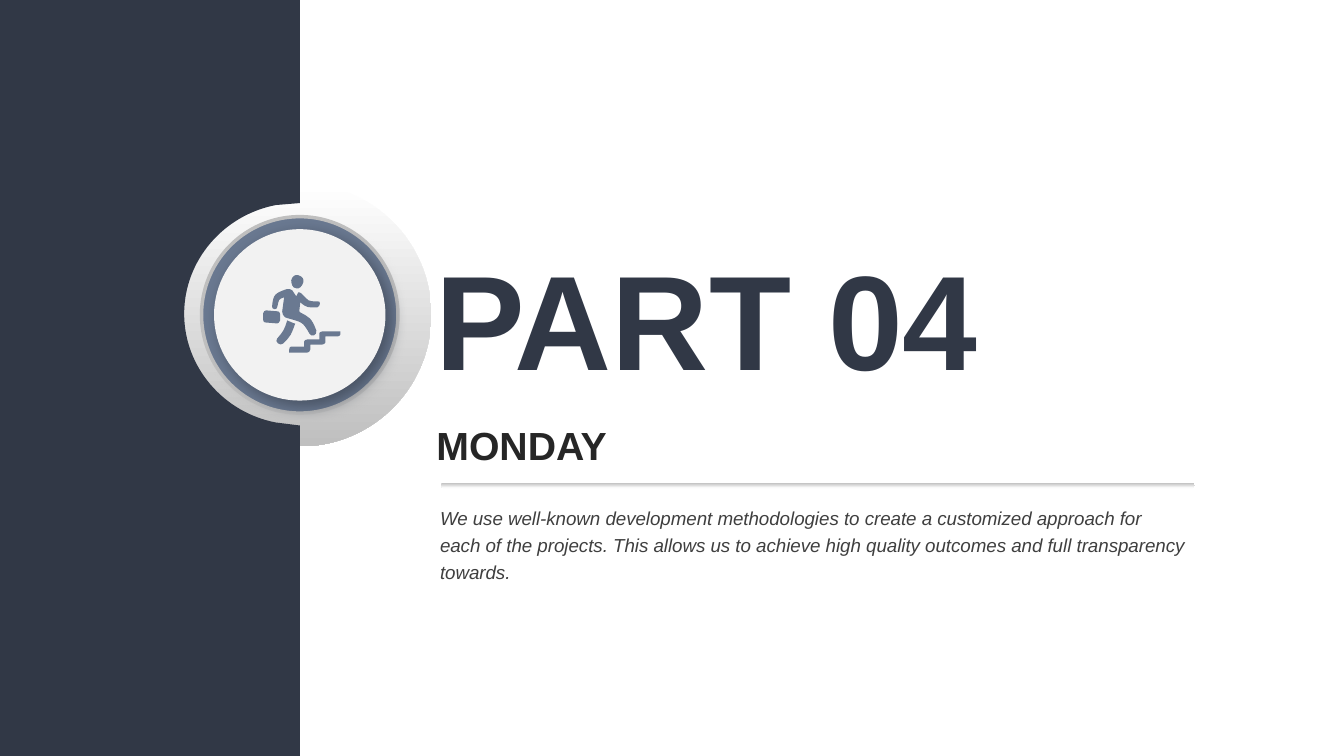
import lxml.etree
import pptx
import pptx.dml.color
import pptx.enum.shapes
import pptx.enum.text
import pptx.oxml.ns
import pptx.util

Cm = pptx.util.Cm
qn = pptx.oxml.ns.qn
SHAPE = pptx.enum.shapes.MSO_SHAPE
ALIGN = pptx.enum.text.PP_ALIGN

COLORS = {
    "navy": "313846", "slate": "6A7991", "pale": "F2F2F2", "white": "FFFFFF",
    "silver": "BFBFBF", "shade": "353C48", "ink": "262626", "text": "3F3F3F",
}

# Outlines on a unit grid: a pair is a corner, six numbers are a curve
PANEL = [
    (0, 0), (298, 0), (298, 240), (274, 242), (222, 252, 183, 297, 183, 350),
    (183, 403, 222, 448, 274, 458), (298, 461), (298, 811), (0, 811),
]
STAIRS = [
    (28, 72), (41, 72), (41, 67), (41, 66, 42, 65, 44, 65), (56, 65), (56, 59),
    (56, 58, 57, 57, 59, 57), (77, 57), (77, 60), (77, 61, 75, 62, 74, 62),
    (62, 62), (62, 68), (62, 69, 60, 70, 59, 70), (47, 70), (47, 75),
    (47, 77, 45, 78, 44, 78), (26, 78), (26, 75), (26, 73, 27, 72, 28, 72),
]
BRIEFCASE = [
    (2, 48), (14, 49), (15, 49, 16, 48, 17, 46), (17, 40), (17, 39, 16, 37, 15, 37),
    (3, 36), (2, 36, 0, 37, 0, 39), (0, 45), (0, 47, 1, 48, 2, 48),
]
BACK_LEG = [
    (14, 64), (20, 57, 21, 56, 24, 46), (26, 47, 29, 48, 31, 49), (32, 49),
    (28, 60, 28, 61, 20, 69), (17, 72, 11, 67, 14, 64),
]
HEAD = [
    (35, 1), (39, 2, 41, 5, 40, 8), (39, 12, 36, 15, 33, 14),
    (29, 14, 28, 9, 28, 6), (29, 2, 32, 0, 35, 1),
]
BODY = [
    (35, 18), (35, 18, 37, 18, 38, 19), (46, 27, 44, 27, 54, 27),
    (58, 26, 57, 32, 54, 33), (45, 33, 44, 34, 37, 28), (36, 37),
    (36, 37, 36, 38, 37, 38), (46, 43, 48, 43, 53, 56), (54, 61, 48, 63, 46, 59),
    (39, 46, 38, 48, 22, 43), (20, 41, 19, 40, 19, 37), (21, 23),
    (15, 25, 16, 25, 14, 33), (14, 36, 8, 35, 9, 32), (10, 20, 12, 19, 23, 15),
    (25, 14, 28, 15, 29, 16), (33, 22),
]


def rgb(name):
    return pptx.dml.color.RGBColor.from_string(COLORS[name])


def paint(sp, fill):
    """Fill with one colour, or with a top-to-bottom gradient for a pair."""
    sp.shadow.inherit = False
    sp.line.fill.background()
    if isinstance(fill, str):
        sp.fill.solid()
        sp.fill.fore_color.rgb = rgb(fill)
        return
    sp.fill.gradient()
    sp.fill.gradient_angle = 270
    for stop, name in zip(sp.fill.gradient_stops, fill):
        stop.color.rgb = rgb(name)


def add_glow(sp):
    effects = sp._element.spPr.find(qn("a:effectLst"))
    shadow = lxml.etree.SubElement(
        effects, qn("a:outerShdw"), blurRad=str(pptx.util.Pt(12)),
        dist=str(pptx.util.Pt(5)), dir="2700000", algn="tl", rotWithShape="0")
    color = lxml.etree.SubElement(shadow, qn("a:srgbClr"), val=COLORS["shade"])
    lxml.etree.SubElement(color, qn("a:alpha"), val="64000")


def add_outline(shapes, contours, x, y, unit, fill):
    """Draw closed contours whose grid unit is `unit` cm, with (x, y) as grid origin."""
    fb = None
    for start, *segments in contours:
        if fb is None:
            fb = shapes.build_freeform(*start, scale=float(Cm(unit)))
        else:
            fb.move_to(*start)
        points = [seg[i:i + 2] for seg in segments for i in range(0, len(seg), 2)]
        fb.add_line_segments(points, close=True)
    sp = fb.convert_to_shape(Cm(x), Cm(y))
    paint(sp, fill)

    # Join the three points of each curve into one Bezier element
    nodes = iter(list(sp._element.iter(qn("a:lnTo"))))
    for segment in (seg for contour in contours for seg in contour[1:]):
        node = next(nodes)
        if len(segment) == 6:
            node.tag = qn("a:cubicBezTo")
            for extra in (next(nodes), next(nodes)):
                node.append(extra[0])
                extra.getparent().remove(extra)


def add_badge(shapes, x, y, size):
    """Concentric discs centred in a square box."""
    discs = [(size, ("white", "silver")), (4.95, "slate"), (4.32, "pale")]
    for d, fill in discs:
        inset = (size - d) / 2
        sp = shapes.add_shape(SHAPE.OVAL, Cm(x + inset), Cm(y + inset), Cm(d), Cm(d))
        paint(sp, fill)
        if fill == "slate":
            sp.line.color.rgb = rgb("silver")
            sp.line.width = pptx.util.Pt(2.5)
    add_glow(sp)


def add_panel(shapes, x, y, w):
    """Side panel of width w with a round bite out of its right edge."""
    add_outline(shapes, [PANEL], x, y, w / 298, "navy")


def add_icon(shapes, x, y, w):
    """Climber with a briefcase, drawn in a box of width w."""
    for contours in ([STAIRS], [BRIEFCASE, BACK_LEG, HEAD, BODY]):
        add_outline(shapes, contours, x, y, w / 77, "slate")


def add_text(shapes, x, y, w, h, text, color, font, para):
    tf = shapes.add_textbox(Cm(x), Cm(y), Cm(w), Cm(h)).text_frame
    tf.word_wrap = True
    p = tf.paragraphs[0]
    r = p.add_run()
    r.text = text
    r.font.color.rgb = rgb(color)
    for obj, values in ((r.font, {"name": "Arial", **font}), (p, para)):
        for key, value in values.items():
            setattr(obj, key, value)


def add_heading(shapes, x, y, w):
    """Part number, subtitle, rule and summary in a column."""
    Pt = pptx.util.Pt
    rule = shapes.add_shape(SHAPE.ROUNDED_RECTANGLE, Cm(x + 0.39), Cm(y + 6.35),
                            Cm(w - 0.41), Cm(0.13))
    rule.adjustments[0] = 0.5
    paint(rule, ("silver", "white"))
    add_text(shapes, x, y, 16.36, 4.37, "PART 04", "navy",
             {"size": Pt(96), "bold": True}, {})
    add_text(shapes, x + 0.03, y + 4.67, 9.22, 1.45, "MONDAY", "ink",
             {"size": Pt(28), "bold": True}, {"alignment": ALIGN.JUSTIFY})
    add_text(shapes, x + 0.12, y + 6.71, w - 0.13, 2.29,
             "We use well-known development methodologies to create a customized approach "
             "for each of the projects. This allows us to achieve high quality outcomes "
             "and full transparency towards.", "text",
             {"size": Pt(13.33), "italic": True}, {"line_spacing": 1.2})


def main():
    prs = pptx.Presentation()
    prs.slide_width, prs.slide_height = Cm(33.87), Cm(19.05)
    s = prs.slides.add_slide(prs.slide_layouts[6])
    add_badge(s.shapes.add_group_shape().shapes, 4.24, 4.62, 6.63)
    add_panel(s.shapes, 0, -0.97, 7.56)
    add_heading(s.shapes, 10.72, 5.82, 19.41)
    add_icon(s.shapes.add_group_shape().shapes, 6.63, 6.91, 1.95)
    prs.save("out.pptx")


if __name__ == "__main__":
    main()
